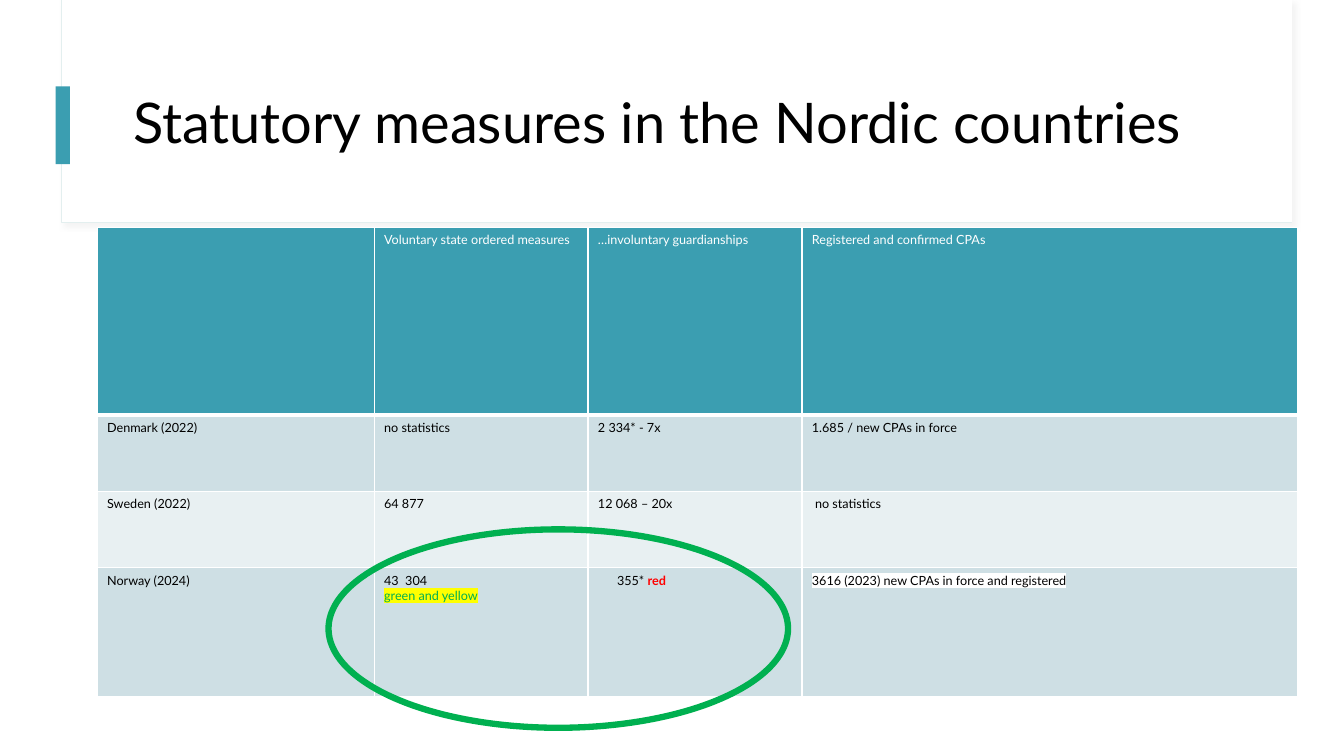
from dataclasses import dataclass
from typing import Any, Optional

import pptx
import pptx.dml.color
import pptx.enum.shapes
import pptx.enum.text
import pptx.oxml
import pptx.oxml.ns
import pptx.util
from lxml import etree

Cm = pptx.util.Cm
Pt = pptx.util.Pt
Kind = pptx.enum.shapes.MSO_SHAPE
qn = pptx.oxml.ns.qn


@dataclass(frozen=True)
class Theme:
    font: str = "Lato"
    title: float = 40
    body: float = 9
    black: str = "000000"
    white: str = "FFFFFF"
    teal: str = "3B9EB1"
    band: str = "CEDFE4"
    pale: str = "E8F0F2"
    edge: str = "E3EFEF"
    shade: str = "D9D9D9"
    green: str = "00B050"
    yellow: str = "FFFF00"
    red: str = "FF0000"


THEME = Theme()


@dataclass(frozen=True)
class Part:
    """A preset shape; box is left, top, width, height in centimetres."""
    kind: Any
    box: tuple[float, float, float, float]
    fill: Optional[str] = None
    line: Optional[str] = None
    width: float = 0
    shade: bool = False


@dataclass(frozen=True)
class Span:
    text: str
    color: str = THEME.black
    bold: bool = False
    mark: Optional[str] = None


@dataclass(frozen=True)
class Entry:
    """Table cell content: a list of paragraphs, each a list of spans."""
    lines: list[list[Span]]
    indent: float = 0


FRAME = [
    Part(Kind.RECTANGLE, (1.55, 0, 31.01, 5.61), THEME.white, THEME.edge, 0.75, True),
    Part(Kind.RECTANGLE, (1.57, 0, 30.99, 5.59), THEME.white),
    Part(Kind.RECTANGLE, (1.4, 2.18, 0.36, 1.96), THEME.teal),
]
RING = Part(Kind.OVAL, (8.28, 13.34, 11.58, 5), line=THEME.green, width=4.5)

COLS = [6.98, 5.39, 5.39, 12.49]
ROWS = [4.72, 1.93, 1.93, 3.25]
FILLS = [THEME.teal, THEME.band, THEME.pale, THEME.band]


def plain(text: str, color: str = THEME.black) -> Entry:
    return Entry([[Span(text, color)]])


HEADS = ["", "Voluntary state ordered measures", "…involuntary guardianships",
         "Registered and confirmed CPAs"]
GRID = [
    [plain(head, THEME.white) for head in HEADS],
    [plain(text) for text in ("Denmark (2022)", "no statistics", "2 334* - 7x",
                              "1.685 / new CPAs in force")],
    [plain(text) for text in ("Sweden (2022)", "64 877", "12 068 – 20x", " no statistics")],
    [
        plain("Norway (2024)"),
        Entry([[Span("43  304")],
               [Span("green and yellow", THEME.green, mark=THEME.yellow)]]),
        Entry([[Span("355* "), Span("red", THEME.red, bold=True)]], indent=0.48),
        Entry([[Span("3616 (2023) new CPAs in force and registered", mark=THEME.white)]]),
    ],
]


def rgb(code: str) -> Any:
    return pptx.dml.color.RGBColor.from_string(code)


def node(home: Any, tag: str, **attrs: str) -> Any:
    return etree.SubElement(home, qn(tag), attrs)


def write(para: Any, text: str, *, size: float = THEME.body, color: str = THEME.black,
          bold: bool = False, mark: Optional[str] = None) -> None:
    """Add a run to the paragraph; mark is its highlight colour."""
    run = para.add_run()
    run.text = text
    run.font.name = THEME.font
    run.font.size = Pt(size)
    run.font.bold = bold
    run.font.color.rgb = rgb(color)
    if mark:
        tint = pptx.oxml.parse_xml(
            f'<a:highlight {pptx.oxml.ns.nsdecls("a")}><a:srgbClr val="{mark}"/></a:highlight>')
        run.font.fill  # the highlight belongs right after the text fill
        run._r.get_or_add_rPr().find(qn("a:solidFill")).addnext(tint)


def draw(slide: Any, part: Part) -> None:
    shape = slide.shapes.add_shape(part.kind, *(Cm(size) for size in part.box))
    if part.fill:
        shape.fill.solid()
        shape.fill.fore_color.rgb = rgb(part.fill)
    else:
        shape.fill.background()
    if part.line:
        shape.line.color.rgb = rgb(part.line)
        shape.line.width = Pt(part.width)
    else:
        shape.line.fill.background()
    shape.shadow.inherit = False
    if part.shade:
        effect = shape.element.spPr.find(qn("a:effectLst"))
        cast = node(effect, "a:outerShdw", blurRad=str(Pt(4)), dist=str(Pt(3)),
                    dir="2700000", algn="tl", rotWithShape="0")
        tint = node(cast, "a:srgbClr", val=THEME.shade)
        node(tint, "a:alpha", val="30000")


def rule(cell: Any, base: float) -> None:
    """Give the cell white borders, the bottom one of the given width."""
    props = cell._tc.get_or_add_tcPr()
    for side, width in zip("LRTB", (1, 1, 1, base)):
        line = node(props, f"a:ln{side}", w=str(Pt(width)))
        node(node(line, "a:solidFill"), "a:srgbClr", val=THEME.white)


def fill_cell(cell: Any, entry: Entry, color: str, base: float) -> None:
    rule(cell, base)
    cell.fill.solid()
    cell.fill.fore_color.rgb = rgb(color)
    cell.margin_left = Cm(0.25 + entry.indent)
    for pos, line in enumerate(entry.lines):
        para = cell.text_frame.paragraphs[0] if pos == 0 else cell.text_frame.add_paragraph()
        for span in line:
            if span.text:
                write(para, span.text, color=span.color, bold=span.bold, mark=span.mark)


def add_grid(slide: Any) -> None:
    table = slide.shapes.add_table(len(ROWS), len(COLS), Cm(2.45), Cm(5.73),
                                   Cm(sum(COLS)), Cm(sum(ROWS))).table
    for col, width in zip(table.columns, COLS):
        col.width = Cm(width)
    for y, (height, color) in enumerate(zip(ROWS, FILLS)):
        table.rows[y].height = Cm(height)
        for x, entry in enumerate(GRID[y]):
            fill_cell(table.cell(y, x), entry, color, base=1 if y else 3)


def set_title(slide: Any) -> None:
    title = slide.shapes.title
    title.left, title.top, title.width, title.height = (
        Cm(size) for size in (3.1, 1.52, 28.24, 3.28))
    frame = title.text_frame
    frame.word_wrap = True
    frame.vertical_anchor = pptx.enum.text.MSO_ANCHOR.MIDDLE
    para = frame.paragraphs[0]
    para.alignment = pptx.enum.text.PP_ALIGN.LEFT
    para.line_spacing = 0.9
    write(para, "Statutory measures in the Nordic countries", size=THEME.title)
    slide.shapes.element.append(title.element)  # in front of the frame


def main() -> None:
    deck = pptx.Presentation()
    deck.slide_width, deck.slide_height = Cm(33.87), Cm(19.05)
    slide = deck.slides.add_slide(deck.slide_layouts.get_by_name("Title Only"))
    for part in FRAME:
        draw(slide, part)
    set_title(slide)
    add_grid(slide)
    draw(slide, RING)
    deck.save("out.pptx")


if __name__ == "__main__":
    main()
